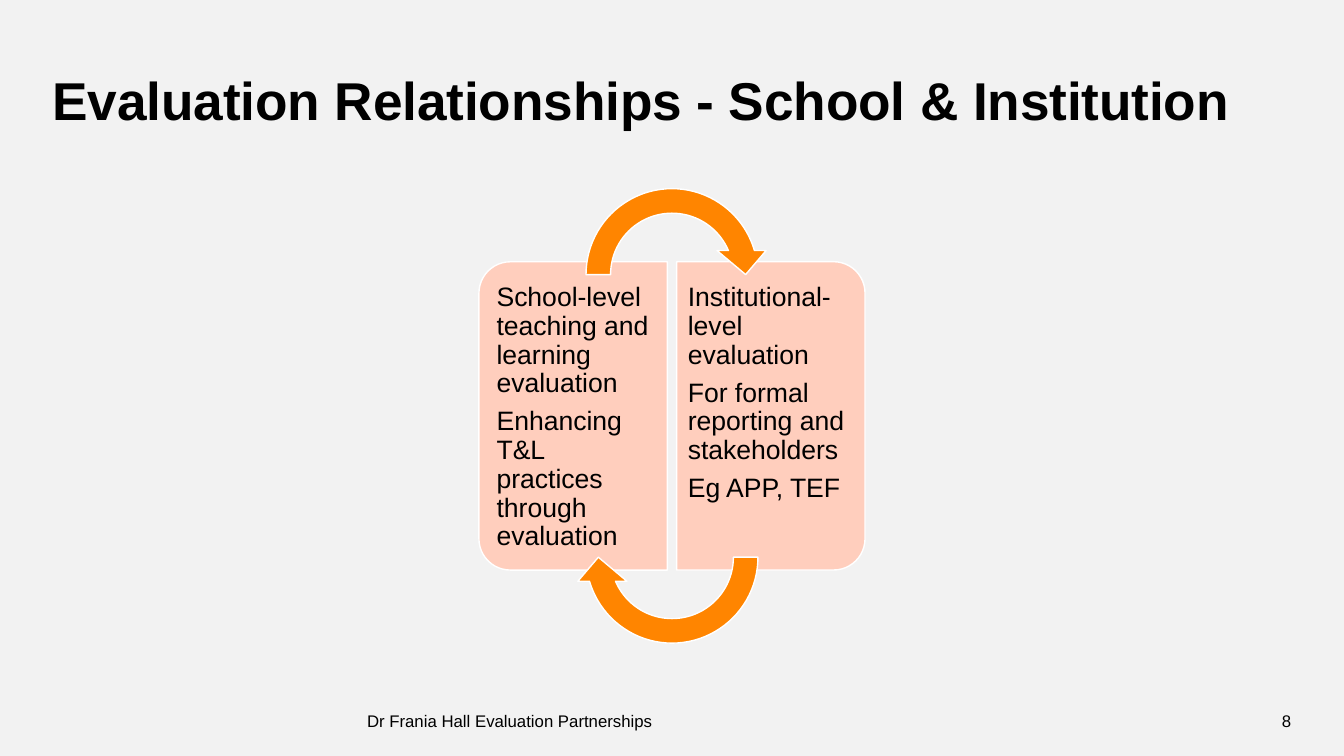
from dataclasses import dataclass

from pptx import Presentation
from pptx.dml.color import RGBColor
from pptx.enum.shapes import MSO_SHAPE
from pptx.enum.text import MSO_ANCHOR, PP_ALIGN
from pptx.util import Cm, Pt

TITLE = "Evaluation Relationships - School & Institution"
FOOTER = "Dr Frania Hall Evaluation Partnerships"
PAGE_NUMBER = "8"
SCHOOL = [
    "School-level teaching and learning evaluation",
    "Enhancing T&L practices through evaluation",
]
INSTITUTION = [
    "Institutional- level evaluation",
    "For formal reporting and stakeholders",
    "Eg APP, TEF",
]
PANELS = [
    {"side": -1, "rotation": 270, "lines": SCHOOL, "insets": (0.2, 0.33, 0.3, 0.33)},
    {"side": 1, "rotation": 90, "lines": INSTITUTION, "insets": (0.3, 0.33, 0.2, 0.33)},
]
ARROWS = [{"side": -1, "rotation": 0}, {"side": 1, "rotation": 180}]


@dataclass(frozen=True)
class Theme:
    font: str = "Arial"
    background: str = "F2F2F2"
    ink: str = "000000"
    panel: str = "FFCEBD"
    arrow: str = "FF8500"
    outline: str = "FFFFFF"
    title_size: int = 38
    body_size: int = 19
    footer_size: int = 12


THEME = Theme()
SLIDE_WIDTH, SLIDE_HEIGHT = 33.87, 19.05
CENTRE_X, CENTRE_Y = SLIDE_WIDTH / 2, 10.48
PANEL_LENGTH, PANEL_BREADTH, PANEL_OFFSET = 7.77, 4.75, 2.49
TEXT_WIDTH, TEXT_HEIGHT, TEXT_OFFSET = 4.52, 7.32, 2.36
ARROW_SIZE, ARROW_OFFSET = 4.95, 3.56
PANEL_CORNERS = (0.167, 0)
ARROW_CURVE = (0.125, 11.423, 204.577, 108, 0.125)


def centred(x, y, width, height):
    return x - width / 2, y - height / 2, width, height


def add_text(page, lines, frame, *, size, insets=(0, 0, 0, 0), anchor=MSO_ANCHOR.TOP,
             align=PP_ALIGN.LEFT, bold=False, line_spacing=1.0, space_after=0, tracking=0):
    box = page.shapes.add_textbox(*map(Cm, frame))
    body = box.text_frame
    body.word_wrap = True
    body.vertical_anchor = anchor
    body.margin_left, body.margin_top, body.margin_right, body.margin_bottom = map(Cm, insets)
    for index, line in enumerate(lines):
        para = body.add_paragraph() if index else body.paragraphs[0]
        para.alignment = align
        para.line_spacing = line_spacing
        para.space_after = Pt(space_after)
        span = para.add_run()
        span.text = line
        span.font.name = THEME.font
        span.font.size = Pt(size)
        span.font.bold = bold
        span.font.color.rgb = RGBColor.from_string(THEME.ink)
        if tracking:
            span._r.get_or_add_rPr().set("spc", str(round(tracking * 100)))


def add_figure(page, kind, frame, rotation, adjustments, fill):
    figure = page.shapes.add_shape(kind, *map(Cm, frame))
    figure.shadow.inherit = False
    figure.rotation = rotation
    for index, value in enumerate(adjustments):
        figure.adjustments[index] = value
    figure.fill.solid()
    figure.fill.fore_color.rgb = RGBColor.from_string(fill)
    figure.line.color.rgb = RGBColor.from_string(THEME.outline)
    figure.line.width = Pt(1)


def main():
    deck = Presentation()
    deck.slide_width, deck.slide_height = Cm(SLIDE_WIDTH), Cm(SLIDE_HEIGHT)
    page = deck.slides.add_slide(deck.slide_layouts[6])
    page.background.fill.solid()
    page.background.fill.fore_color.rgb = RGBColor.from_string(THEME.background)

    add_text(page, [TITLE], (1.32, 1.42, 31.2, 1.9), size=THEME.title_size, bold=True,
             anchor=MSO_ANCHOR.BOTTOM, line_spacing=0.9, tracking=-0.1)

    for panel in PANELS:
        side = panel["side"]
        add_figure(page, MSO_SHAPE.ROUND_2_SAME_RECTANGLE,
                   centred(CENTRE_X + side * PANEL_OFFSET, CENTRE_Y, PANEL_LENGTH, PANEL_BREADTH),
                   panel["rotation"], PANEL_CORNERS, THEME.panel)
        add_text(page, panel["lines"],
                 centred(CENTRE_X + side * TEXT_OFFSET, CENTRE_Y, TEXT_WIDTH, TEXT_HEIGHT),
                 size=THEME.body_size, insets=panel["insets"], line_spacing=0.9,
                 space_after=0.35 * THEME.body_size)

    for arrow in ARROWS:
        add_figure(page, MSO_SHAPE.CIRCULAR_ARROW,
                   centred(CENTRE_X, CENTRE_Y + arrow["side"] * ARROW_OFFSET, ARROW_SIZE, ARROW_SIZE),
                   arrow["rotation"], ARROW_CURVE, THEME.arrow)

    add_text(page, [FOOTER], (9.25, 17.65, 22.15, 1.02), size=THEME.footer_size,
             anchor=MSO_ANCHOR.MIDDLE)
    add_text(page, [PAGE_NUMBER], (31.4, 17.65, 1.14, 1.02), size=THEME.footer_size,
             anchor=MSO_ANCHOR.MIDDLE, align=PP_ALIGN.RIGHT)
    deck.save("out.pptx")


if __name__ == "__main__":
    main()
